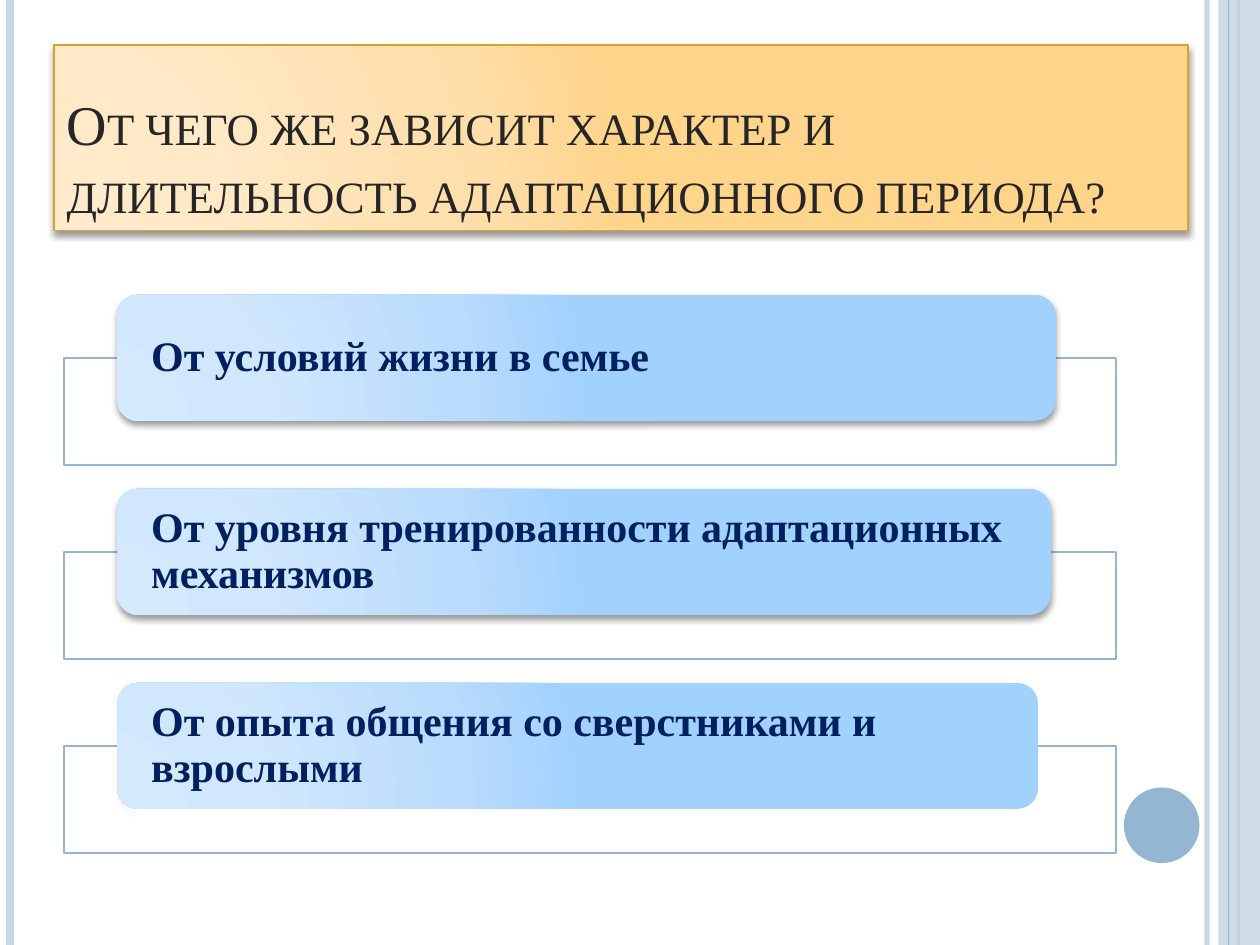
import pptx
import pptx.dml.color
import pptx.enum.shapes
import pptx.enum.text
import pptx.oxml
import pptx.oxml.ns
import pptx.util
from pptx.util import Inches

NS = pptx.oxml.ns.nsdecls("a")
SHAPE = pptx.enum.shapes.MSO_SHAPE
ANCHOR = pptx.enum.text.MSO_ANCHOR
qn = pptx.oxml.ns.qn

prs = pptx.Presentation()
prs.slide_width, prs.slide_height = Inches(10), Inches(7.5)
s = prs.slides.add_slide(prs.slide_layouts[6])


def paint(sp, fill=None, line=None, width=1, alpha=100, shadow=False):
    """Style a shape or connector; a list as fill is a radial gradient of (position, hex)."""
    color = pptx.dml.color.RGBColor.from_string
    sp_pr = sp._element.spPr
    if isinstance(fill, list):
        sp.fill.gradient()
        stops = "".join(f'<a:gs pos="{pos * 1000}"><a:srgbClr val="{c}"/></a:gs>' for pos, c in fill)
        grad = pptx.oxml.parse_xml(
            f'<a:gradFill {NS} rotWithShape="1"><a:gsLst>{stops}</a:gsLst><a:path path="circle">'
            '<a:fillToRect l="5000" t="100000" r="120000" b="10000"/></a:path></a:gradFill>')
        sp_pr.replace(sp_pr.find(qn("a:gradFill")), grad)
    elif fill:
        sp.fill.solid()
        sp.fill.fore_color.rgb = color(fill)
    if line:
        sp.line.color.rgb = color(line)
        sp.line.width = pptx.util.Pt(width)
    else:
        sp.line.fill.background()
    if alpha < 100:
        target = sp_pr if fill else sp_pr.find(qn("a:ln"))
        clr = target.find(qn("a:solidFill")).find(qn("a:srgbClr"))
        clr.append(pptx.oxml.parse_xml(f'<a:alpha {NS} val="{alpha * 1000}"/>'))
    effects = pptx.oxml.parse_xml(f"<a:effectLst {NS}/>")
    if shadow:
        effects.append(pptx.oxml.parse_xml(
            f'<a:outerShdw {NS} blurRad="50800" dist="25400" dir="5400000" rotWithShape="0">'
            '<a:srgbClr val="000000"><a:alpha val="40000"/></a:srgbClr></a:outerShdw>'))
    sp_pr.append(effects)


def write(sp, text, size, color, anchor, bold=False, small_caps=False, spacing=1.0):
    tf = sp.text_frame
    tf.word_wrap = True
    tf.vertical_anchor = anchor
    p = tf.paragraphs[0]
    p.alignment = pptx.enum.text.PP_ALIGN.LEFT
    p.line_spacing = spacing
    r = p.add_run()
    r.text = text
    r.font.name = "Times New Roman"
    r.font.size = pptx.util.Pt(size)
    r.font.bold = bold
    r.font.color.rgb = pptx.dml.color.RGBColor.from_string(color)
    if small_caps:
        r.font._element.set("cap", "small")


# Side stripes; the wide translucent band lies under the last line only
for x, color, width, alpha in [(9.58, "C8D7E5", 3, 93), (0.08, "C8D7E5", 4.5, 100),
                               (9.83, "94B6D2", 1.5, 100), (9.75, "94B6D2", 0.75, 100)]:
    if x == 9.75:
        band = s.shapes.add_shape(SHAPE.RECTANGLE, Inches(9.67), 0, Inches(0.33), Inches(7.5))
        paint(band, "C8D7E5", alpha=87)
    stripe = s.shapes.add_connector(pptx.enum.shapes.MSO_CONNECTOR.STRAIGHT,
                                    Inches(x), 0, Inches(x), Inches(7.5))
    paint(stripe, line=color, width=width, alpha=alpha)

dot = s.shapes.add_shape(SHAPE.OVAL, Inches(8.92), Inches(6.25), Inches(0.6), Inches(0.6))
paint(dot, "94B6D2")

title = s.shapes.add_shape(SHAPE.RECTANGLE, Inches(0.43), Inches(0.36), Inches(9), Inches(1.47))
paint(title, [(0, "FFEACB"), (30, "FFE9C6"), (75, "FFDEA9"), (100, "FFD48B")],
      line="D4A334", shadow=True)
write(title, "От чего же зависит характер и длительность адаптационного периода?",
      32, "262626", ANCHOR.BOTTOM, small_caps=True)

# Three factors: an outlined frame, a rounded bar over its top edge, and the bar's text
BLUES = [(0, "D5E9FD"), (30, "D1E7FD"), (75, "B9DBFC"), (100, "A1D1FD")]
factors = [("От условий жизни в семье", 7.45),
           ("От уровня тренированности адаптационных механизмов", 7.41),
           ("От опыта общения со сверстниками и взрослыми", 7.31)]
for i, (text, width) in enumerate(factors):
    top = 2.34 + 1.54 * i
    frame = s.shapes.add_shape(SHAPE.RECTANGLE, Inches(0.51), Inches(top + 0.5),
                               Inches(8.35), Inches(0.85))
    paint(frame, "FFFFFF", line="94B6D2", alpha=90)
    bar = s.shapes.add_shape(SHAPE.ROUNDED_RECTANGLE, Inches(0.93), Inches(top),
                             Inches(width), Inches(1))
    paint(bar, BLUES, shadow=True)
    label = s.shapes.add_textbox(Inches(0.98), Inches(top + 0.05), Inches(width - 0.1), Inches(0.9))
    tf = label.text_frame
    tf.margin_left = tf.margin_right = Inches(0.22)
    tf.margin_top = tf.margin_bottom = 0
    write(label, text, 24, "002060", ANCHOR.MIDDLE, bold=True, spacing=0.9)

prs.save("out.pptx")
